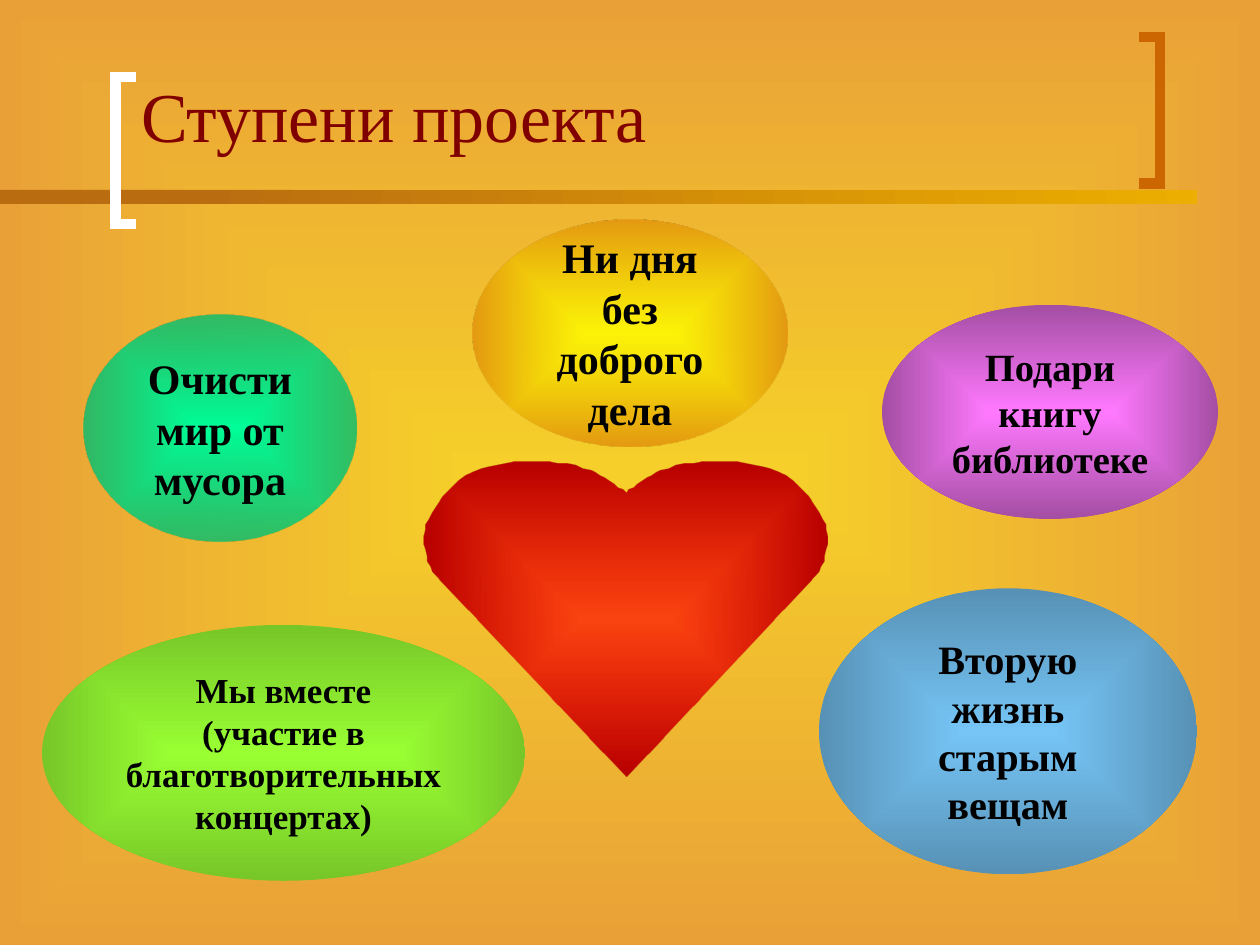
from lxml.etree import SubElement
from pptx import Presentation
from pptx.dml.color import RGBColor
from pptx.enum.shapes import MSO_SHAPE
from pptx.enum.text import MSO_ANCHOR, MSO_AUTO_SIZE, PP_ALIGN
from pptx.oxml.ns import qn
from pptx.util import Pt

FONT = "Times New Roman"
COLORS = {
    "bg_in": "F6CF2A", "bg_out": "E9A137",
    "title": "800000", "text": "000000",
    "bar_start": "BA6D10", "bar_end": "ECAE00",
    "bracket_left": "FFFFFF", "bracket_right": "CC6600",
    "heart_in": "FF0000", "heart_out": "B60000",
    "yellow_in": "FFFF00", "yellow_out": "E49912",
    "pink_in": "FF79FF", "pink_out": "A44EA4",
    "blue_in": "76C5F6", "blue_out": "5791B5",
    "mint_in": "00FF99", "mint_out": "00BC71",
    "lime_in": "99FF33", "lime_out": "77C728",
}
ALPHA = {"heart_in": 64, "yellow_in": 83, "mint_out": 78}

STEPS = [
    ("yellow", (270, 125.3, 180, 129.6), 24, ["Ни дня без доброго дела"]),
    ("pink", (504, 174.2, 192, 122.4), 22, ["Подари книгу библиотеке"]),
    ("blue", (468, 336.2, 216, 163.4), 23, ["Вторую жизнь старым вещам"]),
    ("mint", (48, 180, 155.5, 129.6), 24, ["Очисти", "мир от мусора"]),
    ("lime", (24, 357.1, 276, 146.2), 20,
     ["Мы вместе (участие в благотворительных концертах)"]),
]

HEART_NOTCH = (0, 0.1)
HEART_CURVES = [
    ((-0.04, 0.08), (-0.12, 0.04), (-0.17, 0.03)),
    ((-0.27, 0), (-0.39, 0), (-0.5, 0)),
    ((-0.62, 0), (-0.73, 0.02), (-0.82, 0.06)),
    ((-0.89, 0.1), (-0.95, 0.15), (-0.98, 0.2)),
    ((-1, 0.25), (-0.98, 0.31), (-0.95, 0.35)),
]


def rgb(name):
    return RGBColor.from_string(COLORS[name])


def fill_gradient(fill, element, start, end, angle=None):
    fill.gradient()
    grad = next(element.iter(qn("a:gradFill")))
    for child in list(grad):
        grad.remove(child)
    stops = SubElement(grad, qn("a:gsLst"))
    for pos, name in (("0", start), ("100000", end)):
        stop = SubElement(stops, qn("a:gs"), pos=pos)
        color = SubElement(stop, qn("a:srgbClr"), val=COLORS[name])
        if name in ALPHA:
            SubElement(color, qn("a:alpha"), val=str(ALPHA[name] * 1000))
    if angle is not None:
        SubElement(grad, qn("a:lin"), ang=str(angle * 60000), scaled="0")
    else:
        path = SubElement(grad, qn("a:path"), path="shape")
        SubElement(path, qn("a:fillToRect"), l="50000", t="50000", r="50000", b="50000")


def add_plain(s, shape, box):
    sp = s.shapes.add_shape(shape, *map(Pt, box))
    sp.shadow.inherit = False
    sp.line.fill.background()
    return sp


def add_outline(s, points, close):
    builder = s.shapes.build_freeform(*points[0], scale=Pt(1))
    builder.add_line_segments(points[1:], close=close)
    sp = builder.convert_to_shape()
    sp.shadow.inherit = False
    return sp


def add_bar(s, box):
    x, y, w, h = box
    solid = 168
    sp = add_plain(s, MSO_SHAPE.RECTANGLE, (x, y, solid, h))
    sp.fill.solid()
    sp.fill.fore_color.rgb = rgb("bar_start")
    # The fade starts inside the solid part so that no seam shows.
    overlap = 54
    sp = add_plain(s, MSO_SHAPE.RECTANGLE, (x + solid - overlap, y, w - solid + overlap, h))
    fill_gradient(sp.fill, sp._element, "bar_start", "bar_end", angle=0)


def add_bracket(s, box, color, opens_right):
    x, y, w, h = box
    tip, spine = (x + w, x) if opens_right else (x, x + w)
    sp = add_outline(s, [(tip, y), (spine, y), (spine, y + h), (tip, y + h)], False)
    sp.fill.background()
    sp.line.color.rgb = rgb(color)
    sp.line.width = Pt(6)
    SubElement(sp.line._get_or_add_ln(), qn("a:miter"), lim="800000")


def add_title(s, box, text):
    sp = s.shapes.title
    sp.left, sp.top, sp.width, sp.height = map(Pt, box)
    tf = sp.text_frame
    tf.text = text
    tf.auto_size = MSO_AUTO_SIZE.NONE
    tf.vertical_anchor = MSO_ANCHOR.BOTTOM
    p = tf.paragraphs[0]
    p.alignment = PP_ALIGN.LEFT
    font = p.runs[0].font
    font.name, font.size, font.color.rgb = FONT, Pt(40), rgb("title")


def bezier(a, b, c, d, steps=8):
    for i in range(1, steps + 1):
        t = i / steps
        u = 1 - t
        yield tuple(u**3 * p + 3 * u * u * t * q + 3 * u * t * t * r + t**3 * v
                    for p, q, r, v in zip(a, b, c, d))


def add_heart(s, box):
    x, y, w, h = box
    half = [HEART_NOTCH]
    for curve in HEART_CURVES:
        half.extend(bezier(half[-1], *curve))
    mirrored = [(-u, v) for u, v in reversed(half[1:])]
    points = [(x + w * (1 + u) / 2, y + h * v) for u, v in half + [(0, 1)] + mirrored]
    sp = add_outline(s, points, True)
    sp.line.fill.background()
    fill_gradient(sp.fill, sp._element, "heart_in", "heart_out")


def add_step(s, box, color, size, lines):
    sp = add_plain(s, MSO_SHAPE.OVAL, box)
    fill_gradient(sp.fill, sp._element, f"{color}_in", f"{color}_out")
    tf = sp.text_frame
    tf.word_wrap = True
    tf.vertical_anchor = MSO_ANCHOR.MIDDLE
    tf.text = "\n".join(lines)
    for p in tf.paragraphs:
        p.alignment = PP_ALIGN.CENTER
        font = p.runs[0].font
        font.name, font.size, font.bold = FONT, Pt(size), True
        font.color.rgb = rgb("text")


def main():
    prs = Presentation()
    prs.slide_width, prs.slide_height = Pt(720), Pt(540)
    s = prs.slides.add_slide(prs.slide_layouts[5])
    fill_gradient(s.background.fill, s._element, "bg_in", "bg_out")
    add_bar(s, (0, 108.6, 684, 8))
    add_bracket(s, (66, 44, 12, 84), "bracket_left", True)
    add_bracket(s, (650.6, 21.4, 12, 84), "bracket_right", False)
    add_title(s, (73.4, 8, 564, 85), "Ступени проекта")
    add_heart(s, (241, 264, 233, 180))
    for color, box, size, lines in STEPS:
        add_step(s, box, color, size, lines)
    prs.save("out.pptx")


if __name__ == "__main__":
    main()
